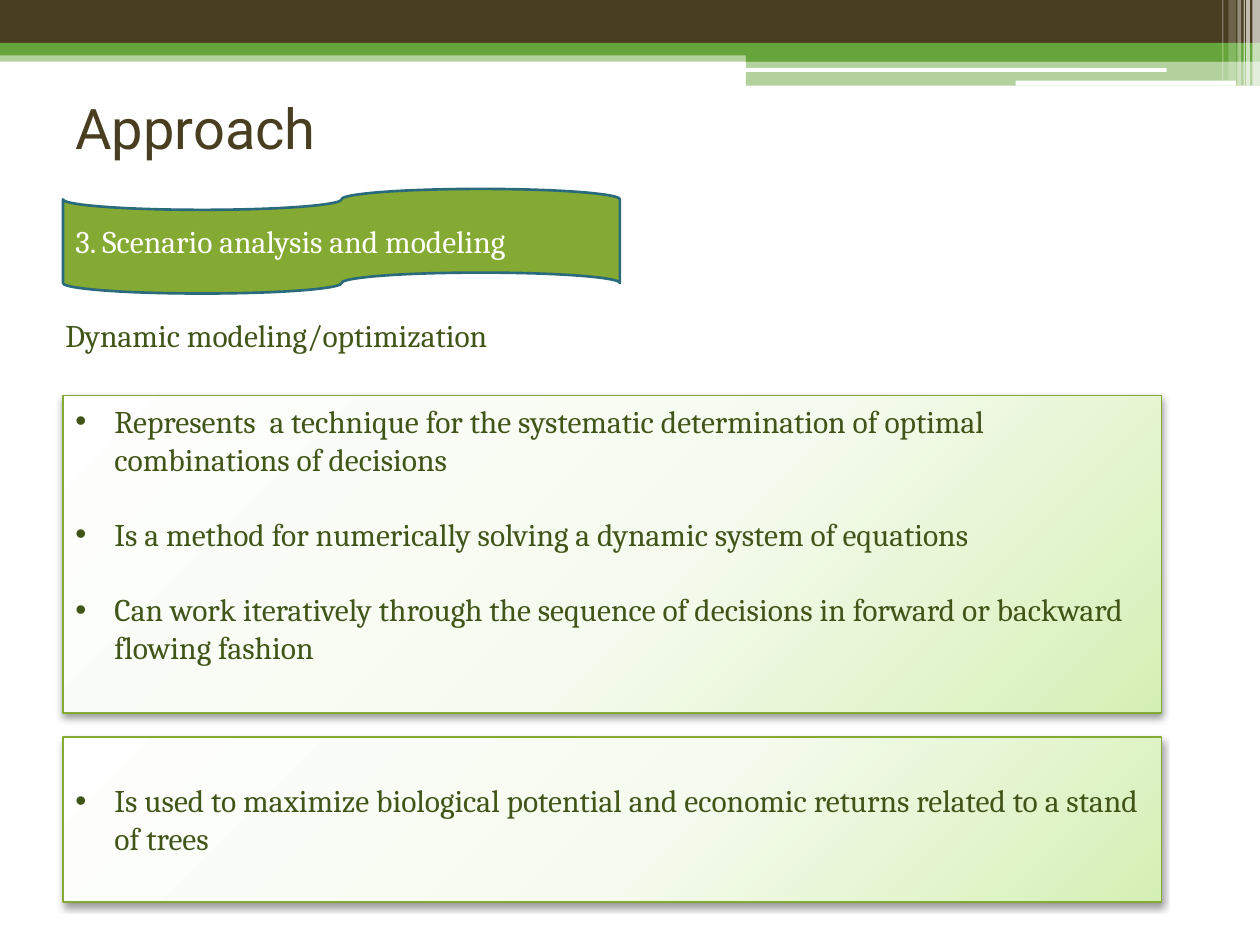
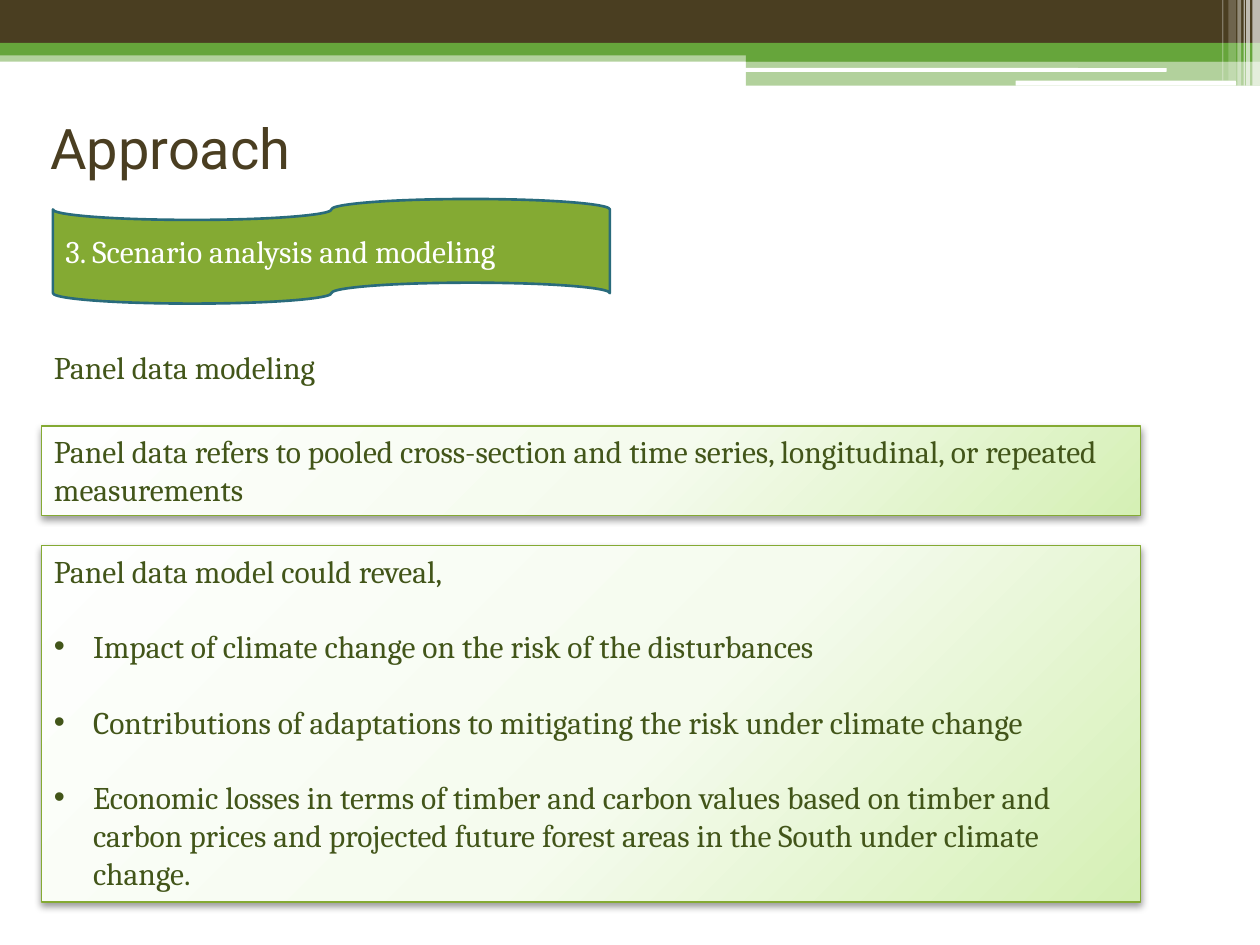
import pptx
import pptx.util
import pptx.dml.color
import pptx.enum.shapes
import pptx.enum.text
import pptx.oxml
import pptx.oxml.ns
from lxml import etree

Inches, Pt = pptx.util.Inches, pptx.util.Pt
RGBColor = pptx.dml.color.RGBColor
Shapes = pptx.enum.shapes.MSO_SHAPE
Anchor = pptx.enum.text.MSO_ANCHOR
qn = pptx.oxml.ns.qn

# Shared look
BROWN = RGBColor(0x4A, 0x3E, 0x21)
GREEN = RGBColor(0x66, 0xA5, 0x3B)
LEAF = RGBColor(0x84, 0xAA, 0x33)
TEAL = RGBColor(0x29, 0x6B, 0x7C)
MOSS = RGBColor(0x42, 0x55, 0x19)
WHITE = RGBColor(0xFF, 0xFF, 0xFF)
PANEL_STOPS = [
    (0, RGBColor(0xFE, 0xFF, 0xFE)),
    (55, RGBColor(0xF5, 0xFB, 0xEE)),
    (100, RGBColor(0xD5, 0xF0, 0xB5)),
]
TITLE_FONT, BODY_FONT = "Roboto", "Cambria"
BODY_SIZE = 18
BLANK_LINE = 21.5  # points between separated paragraphs
PANEL_WIDTH = 8.72

# Header bands: left, top, width, height, colour, opacity in percent
BANDS = [
    (0, 0.4, 10, 0.09, GREEN, 50),
    (0, 0, 10, 0.34, BROWN, 100),
    (0, 0.34, 10, 0.1, GREEN, 100),
    (5.92, 0.39, 4.08, 0.1, GREEN, 100),
    (5.92, 0.48, 4.08, 0.2, GREEN, 50),
]
ROUNDED_RULES = [
    (5.91, 0.54, 3.35, 0.03, WHITE, 100),
    (8.06, 0.64, 1.75, 0.04, WHITE, 100),
]
# Corner stripes: left, width, height, opacity in percent
STRIPES = [
    (9.94, 0.06, 0.68, 65),
    (9.89, 0.03, 0.68, 65),
    (9.87, 0.01, 0.68, 60),
    (9.82, 0.03, 0.68, 40),
    (9.75, 0.06, 0.64, 20),
    (9.7, 0.01, 0.64, 30),
]

# Content: positions are (left, top); panel lines are (text, has bullet)
TITLE = "Approach"
SECTION = "3. Scenario analysis and modeling"
PAGES = [
    {
        "title_at": (0.5, 0.42),
        "section_at": (0.5, 1.5),
        "topic": "Dynamic modeling/optimization",
        "topic_at": (0.42, 2.46),
        "panels": [
            {"at": (0.5, 3.14), "height": 2.52, "lines": [
                ("Represents  a technique for the systematic determination "
                 "of optimal combinations of decisions", True),
                ("Is a method for numerically solving a dynamic system of "
                 "equations", True),
                ("Can work iteratively through the sequence of decisions in "
                 "forward or backward flowing fashion", True),
            ]},
            {"at": (0.5, 5.85), "height": 1.31, "top_inset": 0.35, "lines": [
                ("Is used to maximize biological potential and economic "
                 "returns related to a stand of trees", True),
            ]},
        ],
    },
    {
        "title_at": (0.3, 0.58),
        "section_at": (0.42, 1.58),
        "topic": "Panel data modeling",
        "topic_at": (0.33, 2.71),
        "panels": [
            {"at": (0.33, 3.38), "height": 0.71, "lines": [
                ("Panel data refers to pooled cross-section and time series, "
                 "longitudinal, or repeated measurements", False),
            ]},
            {"at": (0.33, 4.33), "height": 2.83, "lines": [
                ("Panel data model could reveal,", False),
                ("Impact of climate change on the risk of the disturbances",
                 True),
                ("Contributions of adaptations to mitigating the risk under "
                 "climate change", True),
                ("Economic losses in terms of timber and carbon values based "
                 "on timber and carbon prices and projected future forest "
                 "areas in the South under climate change.", True),
            ]},
        ],
    },
]


def add_shape(page, kind, left, top, width, height):
    shape = page.shapes.add_shape(
        kind, Inches(left), Inches(top), Inches(width), Inches(height))
    shape.shadow.inherit = False
    return shape


def add_band(page, kind, left, top, width, height, color, opacity):
    band = add_shape(page, kind, left, top, width, height)
    band.fill.solid()
    band.fill.fore_color.rgb = color
    band.line.fill.background()
    if opacity < 100:
        color_node = band.element.spPr.find(qn("a:solidFill"))[0]
        etree.SubElement(color_node, qn("a:alpha"), val=str(opacity * 1000))


def add_header(page):
    for band in BANDS:
        add_band(page, Shapes.RECTANGLE, *band)
    for rule in ROUNDED_RULES:
        add_band(page, Shapes.ROUNDED_RECTANGLE, *rule)
    for left, width, height, opacity in STRIPES:
        add_band(page, Shapes.RECTANGLE, left, 0, width, height, WHITE, opacity)


def add_bullet(para):
    properties = para._p.get_or_add_pPr()
    properties.set("marL", str(Inches(0.31)))
    properties.set("indent", str(-Inches(0.31)))
    etree.SubElement(properties, qn("a:buFont"), typeface="Arial")
    etree.SubElement(properties, qn("a:buChar"), char="•")


def write(shape, lines, color, anchor, font=BODY_FONT, size=BODY_SIZE):
    frame = shape.text_frame
    frame.word_wrap = True
    frame.vertical_anchor = anchor
    for index, (text, bullet) in enumerate(lines):
        para = frame.add_paragraph() if index else frame.paragraphs[0]
        para.text = text
        para.alignment = pptx.enum.text.PP_ALIGN.LEFT
        para.font.name, para.font.size = font, Pt(size)
        para.font.color.rgb = color
        if index:
            para.space_before = Pt(BLANK_LINE)
        if bullet:
            add_bullet(para)


def add_text(page, text, at, width, height, *style):
    box = page.shapes.add_textbox(*map(Inches, (*at, width, height)))
    write(box, [(text, False)], *style)


def add_section_tape(page, at):
    tape = add_shape(page, Shapes.FLOWCHART_PUNCHED_TAPE, *at, 4.42, 0.83)
    tape.fill.solid()
    tape.fill.fore_color.rgb = LEAF
    tape.line.color.rgb = TEAL
    tape.line.width = Pt(1.5)
    write(tape, [(SECTION, False)], WHITE, Anchor.MIDDLE)


def style_panel(panel):
    """Radial green gradient, thin green outline and a soft shadow below."""
    panel.line.color.rgb = LEAF
    panel.line.width = Pt(0.75)
    properties = panel.element.spPr
    stops = "".join(
        f'<a:gs pos="{position * 1000}"><a:srgbClr val="{color}"/></a:gs>'
        for position, color in PANEL_STOPS)
    gradient = pptx.oxml.parse_xml(
        f'<a:gradFill {pptx.oxml.ns.nsdecls("a")} rotWithShape="1">'
        f'<a:gsLst>{stops}</a:gsLst><a:path path="circle">'
        '<a:fillToRect l="-40000" t="-90000" r="140000" b="190000"/>'
        '</a:path></a:gradFill>')
    properties.find(qn("a:prstGeom")).addnext(gradient)
    shadow = etree.SubElement(
        properties.find(qn("a:effectLst")), qn("a:outerShdw"),
        blurRad=str(Pt(4.1)), dist=str(Pt(2)), dir="5400000", rotWithShape="0")
    shade = etree.SubElement(shadow, qn("a:srgbClr"), val="000000")
    etree.SubElement(shade, qn("a:alpha"), val="40000")


def add_panel(page, at, height, lines, top_inset=0.05):
    panel = add_shape(page, Shapes.RECTANGLE, *at, PANEL_WIDTH, height)
    style_panel(panel)
    panel.text_frame.margin_top = Inches(top_inset)
    write(panel, lines, MOSS, Anchor.TOP)


def main():
    deck = pptx.Presentation()
    deck.slide_width, deck.slide_height = Inches(10), Inches(7.5)
    for content in PAGES:
        page = deck.slides.add_slide(deck.slide_layouts[6])
        add_header(page)
        add_text(page, content["topic"], content["topic_at"], 8.17, 0.71,
                 MOSS, Anchor.TOP)
        add_text(page, TITLE, content["title_at"], 9, 1.17,
                 BROWN, Anchor.MIDDLE, TITLE_FONT, 32)
        for panel in content["panels"]:
            add_panel(page, **panel)
        add_section_tape(page, content["section_at"])
    deck.save("out.pptx")


if __name__ == "__main__":
    main()
